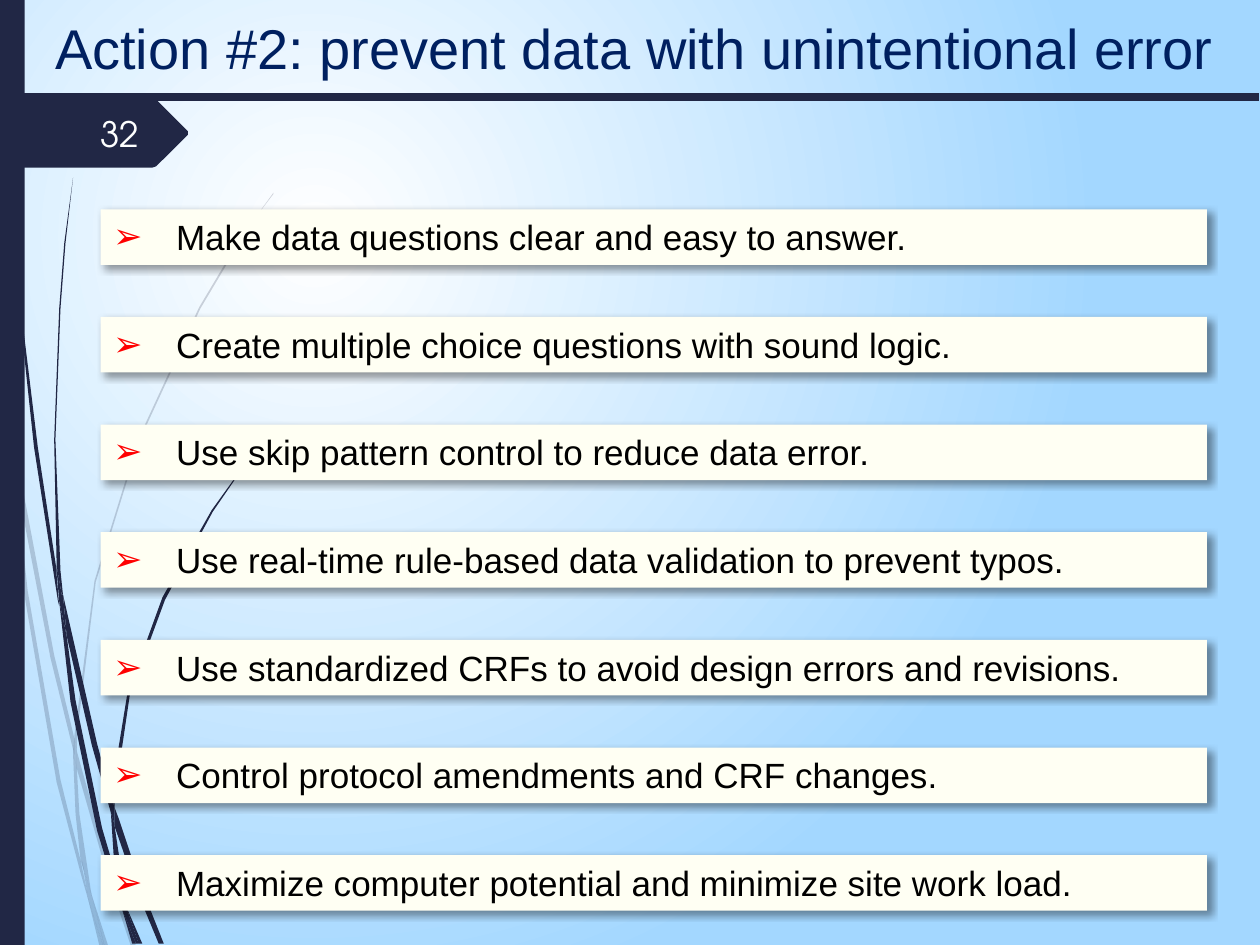
import pptx
import pptx.dml.color
import pptx.enum.shapes
import pptx.enum.text
import pptx.oxml
import pptx.oxml.ns
import pptx.util
from pptx.util import Cm

TITLE = "Action #2: prevent data with unintentional error"
PAGE_NUMBER = "32"
ACTIONS = [
    "Make data questions clear and easy to answer.",
    "Create multiple choice questions with sound logic.",
    "Use skip pattern control to reduce data error.",
    "Use real-time rule-based data validation to prevent typos.",
    "Use standardized CRFs to avoid design errors and revisions.",
    "Control protocol amendments and CRF changes.",
    "Maximize computer potential and minimize site work load.",
]
COLORS = {
    "navy": "212745", "title": "002060", "number": "FEFFFF", "card": "FFFFF3",
    "text": "000000", "bullet": "FF0000", "center": "FFFFFF", "edge": "A3D7FF",
}
BODY_FONT = "Arial"
NUMBER_FONT = "TeX Gyre Adventor"

GRID = Cm(0.0254)
PALE_STEMS = [
    [(8, 350), (6, 322), (0, 282), (0, 299), (7, 344)],
    [(40, 522), (59, 599), (59, 586), (43, 520), (10, 345), (12, 376)],
    [(64, 607), (61, 596), (61, 610), (85, 694), (104, 751), (108, 751), (88, 692)],
    [(83, 751), (86, 751), (73, 711)],
    [(64, 683), (48, 619), (22, 469), (12, 376), (8, 350), (19, 470), (45, 621),
     (64, 693), (70, 714), (69, 707)],
    [(58, 599), (60, 646), (64, 683), (67, 692), (73, 711), (72, 706), (63, 646),
     (61, 610), (61, 608)],
    [(61, 584), (76, 462), (111, 349), (159, 245), (187, 198), (201, 175), (217, 154),
     (217, 153), (201, 175), (186, 197), (158, 244), (110, 348), (75, 461), (59, 584),
     (59, 586), (61, 596)],
    [(70, 714), (79, 751), (82, 751)],
    [(61, 608), (61, 610), (61, 596), (59, 586), (58, 599)],
    [(67, 692), (65, 683), (69, 707), (70, 714), (82, 751), (83, 751), (73, 711)],
]
DARK_STEMS = [
    [(5, 110), (14, 233), (27, 355), (46, 477), (47, 481), (45, 457), (45, 453),
     (30, 355), (15, 232), (6, 109), (4, 48), (3, 0), (2, 0), (3, 48)],
    [(73, 592), (88, 645), (88, 633), (88, 631), (77, 590), (50, 472), (53, 505)],
    [(94, 649), (91, 641), (91, 656), (109, 708), (126, 749), (130, 749), (113, 706)],
    [(91, 691), (81, 657), (60, 556), (53, 505), (47, 477), (56, 557), (77, 659),
     (92, 708), (97, 722), (96, 717)],
    [(50, 472), (48, 453), (44, 349), (48, 245), (52, 193), (58, 141), (51, 193),
     (47, 245), (43, 349), (45, 449), (49, 472)],
    [(110, 749), (113, 749), (100, 719)],
    [(47, 477), (53, 505), (50, 472), (49, 472), (45, 449), (45, 453)],
    [(91, 633), (103, 552), (131, 476), (169, 406), (191, 374), (203, 359), (216, 344),
     (215, 344), (203, 358), (191, 373), (168, 405), (129, 474), (101, 551), (88, 631),
     (91, 641)],
    [(97, 722), (105, 749), (108, 749)],
    [(88, 645), (91, 691), (96, 706), (100, 719), (100, 716), (91, 656), (90, 651)],
    [(88, 645), (90, 651), (91, 656), (91, 641), (88, 631), (88, 633)],
    [(96, 706), (91, 691), (96, 717), (97, 722), (108, 749), (110, 749), (100, 719)],
]
NUMBER_TAG = [(0, 78), (121, 78), (124, 79), (149, 104), (149, 107), (124, 132),
              (121, 133), (0, 133)]

CARD_LEFT, CARD_TOP, CARD_WIDTH, CARD_HEIGHT, CARD_PITCH = 2.03, 4.22, 22.3, 1.12, 2.17


def color(name):
    return pptx.dml.color.RGBColor.from_string(COLORS[name])


def add_xml(parent, markup, index=None):
    namespaces = pptx.oxml.ns.nsdecls("a", "p")
    tag, rest = markup.split(">", 1)
    slash = "/" if tag.endswith("/") else ""
    element = pptx.oxml.parse_xml(f"{tag.rstrip('/')} {namespaces}{slash}>{rest}")
    parent.insert(len(parent) if index is None else index, element)


def paint(shape, name):
    shape.shadow.inherit = False
    shape.fill.solid()
    shape.fill.fore_color.rgb = color(name)
    shape.line.fill.background()


def add_outline(shapes, points, opacity=None):
    builder = shapes.build_freeform(*points[0], scale=GRID)
    builder.add_line_segments(points[1:], close=True)
    outline = builder.convert_to_shape()
    paint(outline, "navy")
    if opacity:
        fill_color = outline.element.spPr.find(".//" + pptx.oxml.ns.qn("a:srgbClr"))
        add_xml(fill_color, f'<a:alpha val="{opacity * 1000}"/>')


def write(shape, text, size, font, name, align, anchor):
    frame = shape.text_frame
    frame.word_wrap = True
    frame.vertical_anchor = anchor
    frame.text = text
    para = frame.paragraphs[0]
    para.alignment = align
    span = para.runs[0]
    span.font.size = pptx.util.Pt(size)
    span.font.name = font
    span.font.color.rgb = color(name)
    return para


def add_card(page, text, top):
    card = page.shapes.add_shape(
        pptx.enum.shapes.MSO_SHAPE.RECTANGLE,
        Cm(CARD_LEFT), Cm(top), Cm(CARD_WIDTH), Cm(CARD_HEIGHT))
    paint(card, "card")
    effects = card.element.spPr.find(pptx.oxml.ns.qn("a:effectLst"))
    add_xml(effects, '<a:outerShdw blurRad="50800" dist="38100" dir="2700000" algn="tl">'
            '<a:srgbClr val="000000"><a:alpha val="40000"/></a:srgbClr></a:outerShdw>')
    para = write(card, text, 20, BODY_FONT, "text", ALIGN.LEFT, ANCHOR.TOP)
    properties = para._p.get_or_add_pPr()
    properties.set("marL", str(Cm(1.27)))
    properties.set("indent", str(-Cm(1.27)))
    add_xml(properties, f'<a:buClr><a:srgbClr val="{COLORS["bullet"]}"/></a:buClr>')
    add_xml(properties, '<a:buFont typeface="Wingdings"/>'.replace("Wingdings", BODY_FONT))
    add_xml(properties, '<a:buChar char="➢"/>')


ALIGN = pptx.enum.text.PP_ALIGN
ANCHOR = pptx.enum.text.MSO_ANCHOR

deck = pptx.Presentation()
deck.slide_width, deck.slide_height = Cm(25.4), Cm(19.05)
page = deck.slides.add_slide(deck.slide_layouts[6])
add_xml(page.element.cSld, f'''<p:bg><p:bgPr><a:gradFill rotWithShape="1"><a:gsLst>
    <a:gs pos="0"><a:srgbClr val="{COLORS["center"]}"/></a:gs>
    <a:gs pos="100000"><a:srgbClr val="{COLORS["edge"]}"/></a:gs></a:gsLst>
    <a:path path="circle"><a:fillToRect l="50000" t="50000" r="100000" b="100000"/></a:path>
    </a:gradFill><a:effectLst/></p:bgPr></p:bg>''', 0)

for stems, opacity in ((PALE_STEMS, 20), (DARK_STEMS, None)):
    group = page.shapes.add_group_shape()
    for points in stems:
        add_outline(group.shapes, points, opacity)

side_bar = page.shapes.add_shape(
    pptx.enum.shapes.MSO_SHAPE.RECTANGLE, 0, 0, Cm(0.5), deck.slide_height)
paint(side_bar, "navy")
add_outline(page.shapes, NUMBER_TAG)

number_box = page.shapes.add_textbox(Cm(1.42), Cm(2.18), Cm(1.63), Cm(1.02))
write(number_box, PAGE_NUMBER, 20, NUMBER_FONT, "number", ALIGN.RIGHT, ANCHOR.MIDDLE)
title_box = page.shapes.add_textbox(Cm(0.86), Cm(0.13), Cm(24.21), Cm(1.63))
write(title_box, TITLE, 32, BODY_FONT, "title", ALIGN.LEFT, ANCHOR.MIDDLE)

rule = page.shapes.add_connector(
    pptx.enum.shapes.MSO_CONNECTOR.STRAIGHT, Cm(0.23), Cm(1.96), Cm(25.37), Cm(1.96))
rule.line.color.rgb = color("navy")
rule.line.width = pptx.util.Pt(4.5)
add_xml(rule.element.spPr, "<a:effectLst/>")

for row, action in enumerate(ACTIONS):
    add_card(page, action, CARD_TOP + row * CARD_PITCH)

deck.save("out.pptx")
